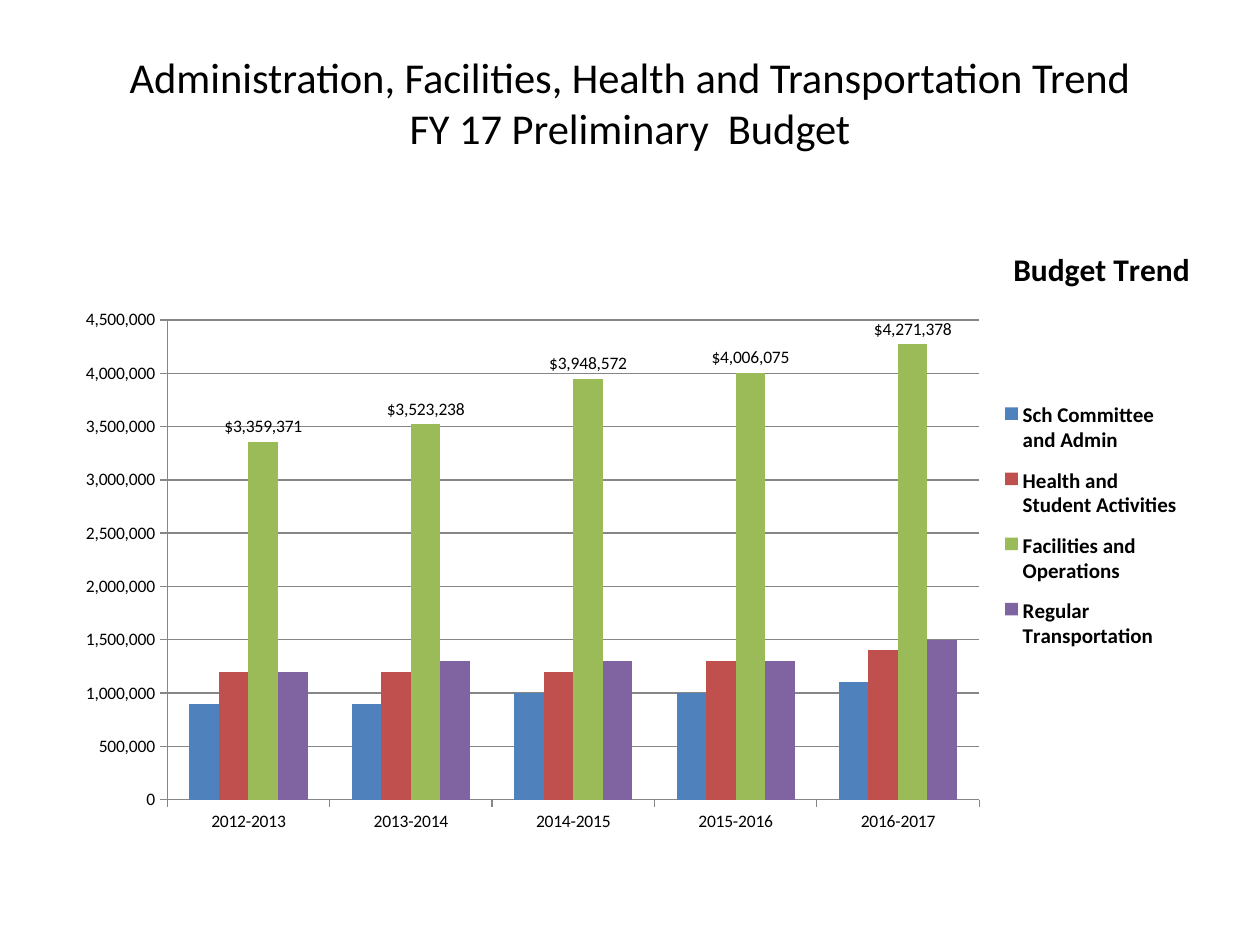
"""Builds the budget trend slide with its clustered column chart."""
from dataclasses import dataclass
from typing import Any, Optional

from lxml.etree import SubElement
from pptx import Presentation
from pptx.chart.data import CategoryChartData
from pptx.dml.color import RGBColor
from pptx.enum.chart import XL_CHART_TYPE, XL_LABEL_POSITION, XL_LEGEND_POSITION, XL_TICK_MARK
from pptx.enum.text import MSO_ANCHOR, PP_ALIGN
from pptx.oxml.ns import qn
from pptx.util import Emu, Pt

PX_PER_INCH = 126


@dataclass(frozen=True)
class Theme:
    font: str = "Calibri"
    text: str = "000000"
    line: str = "868686"
    title: float = 24.3
    chart_title: float = 18
    legend: float = 12
    label: float = 10


@dataclass(frozen=True)
class Box:
    x: int
    y: int
    w: int
    h: int


@dataclass(frozen=True)
class Series:
    name: str
    color: str
    values: tuple[int, ...]
    label_format: Optional[str] = None


THEME = Theme()
TITLE = Box(63, 38, 1134, 157)
CHART = Box(63, 221, 1134, 623)
PLOT = Box(167, 320, 812, 480)
LEGEND = Box(1001, 388, 180, 276)
CHART_TITLE = Box(1008, 242, 190, 38)
YEARS = [f"{year}-{year + 1}" for year in range(2012, 2017)]
SERIES = (
    Series("Sch Committee and Admin", "4F81BD", (900000, 900000, 1000000, 1000000, 1100000)),
    Series("Health and Student Activities", "C0504D", (1200000, 1200000, 1200000, 1300000, 1400000)),
    Series("Facilities and Operations", "9BBB59", (3359371, 3523238, 3948572, 4006075, 4271378), r"\$#,##0"),
    Series("Regular Transportation", "8064A2", (1200000, 1300000, 1300000, 1300000, 1500000)),
)


def px(n: int) -> Emu:
    """Turn whole px into EMU."""
    return Emu(round(n * 914400 / PX_PER_INCH))


def apply(obj: Any, values: dict[str, Any]) -> None:
    """Set each named attribute on an object."""
    for name, value in values.items():
        setattr(obj, name, value)


def place(box: Box) -> dict[str, Emu]:
    """Give a box as shape position values."""
    return dict(left=px(box.x), top=px(box.y), width=px(box.w), height=px(box.h))


def style_font(font: Any, size: float, bold: bool = False) -> None:
    """Apply the theme font at one size."""
    apply(font, dict(name=THEME.font, size=Pt(size), bold=bold))
    font.color.rgb = RGBColor.from_string(THEME.text)


def style_line(line: Any) -> None:
    """Apply the thin chart line."""
    line.width = Pt(0.75)
    line.color.rgb = RGBColor.from_string(THEME.line)


def set_layout(parent: Any, index: int, box: Box, inner: bool = False) -> None:
    """Fix a chart part at a slide position."""
    for old in parent.findall(qn("c:layout")):
        parent.remove(old)
    layout = parent.makeelement(qn("c:layout"))
    parent.insert(index, layout)
    manual = SubElement(layout, qn("c:manualLayout"))
    values = dict(layoutTarget="inner") if inner else {}
    values |= dict(xMode="edge", yMode="edge",
                   x=round((box.x - CHART.x) / CHART.w, 3), y=round((box.y - CHART.y) / CHART.h, 3),
                   w=round(box.w / CHART.w, 3), h=round(box.h / CHART.h, 3))
    for name, value in values.items():
        SubElement(manual, qn(f"c:{name}")).set("val", str(value))


def add_title(s: Any) -> None:
    """Fill the title placeholder."""
    sp = s.shapes.title
    apply(sp, place(TITLE))
    tf = sp.text_frame
    tf.text = "Administration, Facilities, Health and Transportation Trend\vFY 17 Preliminary  Budget"
    apply(tf, dict(word_wrap=True, vertical_anchor=MSO_ANCHOR.MIDDLE, margin_top=px(6), margin_bottom=px(36)))
    p = tf.paragraphs[0]
    p.alignment = PP_ALIGN.CENTER
    for r in p.runs:
        style_font(r.font, THEME.title)


def style_axes(chart: Any) -> None:
    """Format both axes and the gridlines."""
    for axis in (chart.category_axis, chart.value_axis):
        apply(axis, dict(major_tick_mark=XL_TICK_MARK.OUTSIDE, minor_tick_mark=XL_TICK_MARK.NONE))
        style_font(axis.tick_labels.font, THEME.label)
        style_line(axis.format.line)
    axis = chart.value_axis
    apply(axis, dict(minimum_scale=0, maximum_scale=4500000, major_unit=500000, has_major_gridlines=True))
    apply(axis.tick_labels, dict(number_format="#,##0", number_format_is_linked=False))
    style_line(axis.major_gridlines.format.line)


def style_series(plot: Any) -> None:
    """Colour the columns and label the chosen series."""
    apply(plot, dict(gap_width=150, overlap=0, vary_by_categories=False))
    for series, item in zip(plot.series, SERIES):
        series.format.fill.solid()
        series.format.fill.fore_color.rgb = RGBColor.from_string(item.color)
        if item.label_format:
            labels = series.data_labels
            apply(labels, dict(show_value=True, number_format=item.label_format,
                               number_format_is_linked=False, position=XL_LABEL_POSITION.OUTSIDE_END))
            style_font(labels.font, THEME.label)


def add_chart(s: Any) -> None:
    """Add the column chart with its title and legend."""
    data = CategoryChartData(number_format="#,##0")
    data.categories = YEARS
    for item in SERIES:
        data.add_series(item.name, item.values)
    box = place(CHART)
    chart = s.shapes.add_chart(XL_CHART_TYPE.COLUMN_CLUSTERED, *box.values(), data).chart
    style_font(chart.font, THEME.label)
    style_axes(chart)
    style_series(chart.plots[0])
    apply(chart, dict(has_title=True, has_legend=True))
    tf = chart.chart_title.text_frame
    tf.text = "Budget Trend"
    style_font(tf.paragraphs[0].runs[0].font, THEME.chart_title, True)
    apply(chart.legend, dict(position=XL_LEGEND_POSITION.RIGHT, include_in_layout=False))
    style_font(chart.legend.font, THEME.legend, True)
    root = chart._chartSpace.find(qn("c:chart"))
    title = root.find(qn("c:title"))
    title.find(qn("c:overlay")).set("val", "1")
    set_layout(title, 1, CHART_TITLE)
    set_layout(root.find(qn("c:legend")), 1, LEGEND)
    set_layout(root.find(qn("c:plotArea")), 0, PLOT, inner=True)


def main() -> None:
    """Build and save the slide."""
    prs = Presentation()
    apply(prs, dict(slide_width=px(1260), slide_height=px(945)))
    s = prs.slides.add_slide(prs.slide_layouts[5])
    add_title(s)
    add_chart(s)
    prs.save("out.pptx")


if __name__ == "__main__":
    main()
